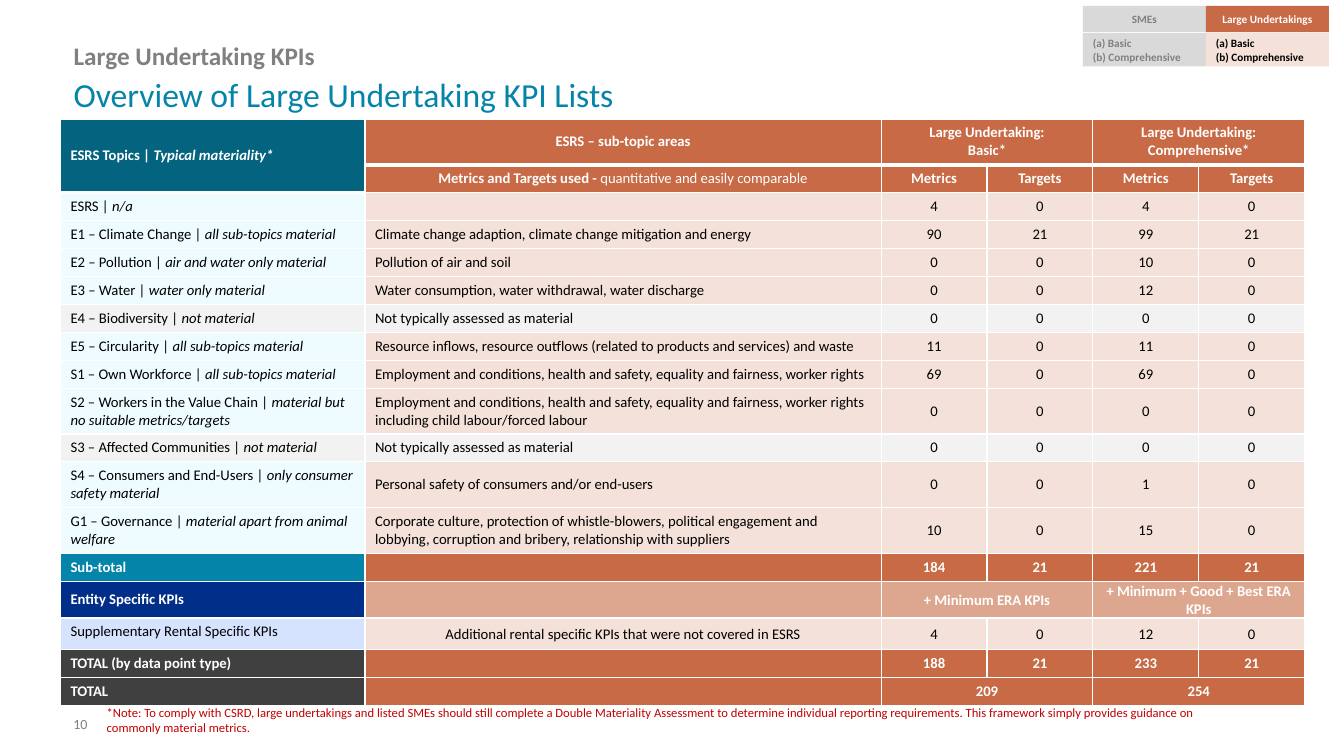
from lxml import etree
from pptx import Presentation
from pptx.dml.color import RGBColor
from pptx.enum.shapes import MSO_SHAPE
from pptx.enum.text import MSO_ANCHOR, MSO_AUTO_SIZE, PP_ALIGN
from pptx.oxml.ns import qn
from pptx.util import Inches, Pt

RECT = MSO_SHAPE.RECTANGLE
TOP, MIDDLE = MSO_ANCHOR.TOP, MSO_ANCHOR.MIDDLE
LEFT, CENTER = PP_ALIGN.LEFT, PP_ALIGN.CENTER
NO_FIT = MSO_AUTO_SIZE.NONE

WHITE = RGBColor(0xFF, 0xFF, 0xFF)
BLACK = RGBColor(0x00, 0x00, 0x00)
GREY = RGBColor(0x80, 0x80, 0x80)
SILVER = RGBColor(0xD9, 0xD9, 0xD9)
PALE_GREY = RGBColor(0xF2, 0xF2, 0xF2)
CHARCOAL = RGBColor(0x40, 0x40, 0x40)
RUST = RGBColor(0xC7, 0x6A, 0x45)
ROSE = RGBColor(0xDD, 0xA6, 0x8F)
PALE_ROSE = RGBColor(0xF4, 0xE1, 0xDA)
DARK_TEAL = RGBColor(0x04, 0x63, 0x7F)
TEAL = RGBColor(0x05, 0x84, 0xAA)
PALE_TEAL = RGBColor(0xEF, 0xFC, 0xFF)
NAVY = RGBColor(0x00, 0x2E, 0x89)
PALE_BLUE = RGBColor(0xD6, 0xE3, 0xFF)
RED = RGBColor(0xC0, 0x00, 0x00)

COLUMNS = [3.02, 5.12] + [1.05] * 4
ROWS = [0.41] + [0.25] * 8 + [0.41, 0.25, 0.41, 0.41, 0.25, 0.33, 0.31, 0.25, 0.25]

TOPICS = [
    ("ESRS", "n/a", "", (4, 0, 4, 0)),
    ("E1 – Climate Change", "all sub-topics material",
     "Climate change adaption, climate change mitigation and energy", (90, 21, 99, 21)),
    ("E2 – Pollution", "air and water only material",
     "Pollution of air and soil", (0, 0, 10, 0)),
    ("E3 – Water", "water only material",
     "Water consumption, water withdrawal, water discharge", (0, 0, 12, 0)),
    ("E4 – Biodiversity", "not material",
     "Not typically assessed as material", (0, 0, 0, 0)),
    ("E5 – Circularity", "all sub-topics material",
     "Resource inflows, resource outflows (related to products and services) and waste",
     (11, 0, 11, 0)),
    ("S1 – Own Workforce", "all sub-topics material",
     "Employment and conditions, health and safety, equality and fairness, worker rights",
     (69, 0, 69, 0)),
    ("S2 – Workers in the Value Chain", "material but no suitable metrics/targets",
     "Employment and conditions, health and safety, equality and fairness, worker rights "
     "including child labour/forced labour", (0, 0, 0, 0)),
    ("S3 – Affected Communities", "not material",
     "Not typically assessed as material", (0, 0, 0, 0)),
    ("S4 – Consumers and End-Users", "only consumer safety material",
     "Personal safety of consumers and/or end-users", (0, 0, 1, 0)),
    ("G1 – Governance", "material apart from animal welfare",
     "Corporate culture, protection of whistle-blowers, political engagement and lobbying, "
     "corruption and bribery, relationship with suppliers", (10, 0, 15, 0)),
]

SUMMARY = [
    ("Sub-total", TEAL, "", RUST, (184, 21, 221, 21)),
    ("Entity Specific KPIs", NAVY, "", ROSE,
     ("+ Minimum ERA KPIs", "", "+ Minimum + Good + Best ERA KPIs", "")),
    ("Supplementary Rental Specific KPIs", PALE_BLUE,
     "Additional rental specific KPIs that were not covered in ESRS", PALE_ROSE,
     (4, 0, 12, 0)),
    ("TOTAL (by data point type)", CHARCOAL, "", RUST, (188, 21, 233, 21)),
    ("TOTAL", CHARCOAL, "", RUST, (209, "", 254, "")),
]


class KpiSlide:
    """Holds the text style and the current slide."""

    font = "Calibri"

    def __init__(self, prs):
        """Add a title and body slide."""
        self.s = prs.slides.add_slide(prs.slide_layouts[1])

    def add_lines(self, tf, lines, size, color, align=LEFT):
        """Add lines of (text, style) runs, where style holds b or i."""
        for i, line in enumerate(lines):
            p = tf.add_paragraph() if i else tf.paragraphs[0]
            p.alignment = align
            for text, style in line:
                r = p.add_run()
                r.text = text
                r.font.name, r.font.size = self.font, Pt(size)
                r.font.color.rgb = color
                r.font.bold, r.font.italic = "b" in style, "i" in style

    def placeholder(self, index, box, anchor, run, size, color):
        """Move and fill one placeholder without a bullet."""
        sp = self.s.placeholders[index]
        sp.left, sp.top, sp.width, sp.height = map(Inches, box)
        tf = sp.text_frame
        tf.auto_size, tf.vertical_anchor = NO_FIT, anchor
        p = tf.paragraphs[0]
        pPr = p._p.get_or_add_pPr()
        pPr.set("marL", "0")
        pPr.set("indent", "0")
        etree.SubElement(pPr, qn("a:buNone"))
        p.line_spacing, p.space_before = 0.9, Pt(0)
        self.add_lines(tf, [[run]], size, color)

    def textbox(self, box, text, size, color, anchor=TOP):
        """Add a wrapping text box."""
        tf = self.s.shapes.add_textbox(*map(Inches, box)).text_frame
        tf.word_wrap, tf.vertical_anchor = True, anchor
        self.add_lines(tf, [[(text, "")]], size, color)

    def tag(self, box, lines, fill, color, align):
        """Add a filled rectangle with small bold text."""
        sp = self.s.shapes.add_shape(RECT, *map(Inches, box))
        sp.shadow.inherit = False
        sp.fill.solid()
        sp.fill.fore_color.rgb = fill
        sp.line.fill.background()
        tf = sp.text_frame
        tf.word_wrap, tf.vertical_anchor = True, MIDDLE
        self.add_lines(tf, [[(line, "b")] for line in lines], 8, color, align)

    def table(self, left, top):
        """Add an empty table with the column and row sizes."""
        tbl = self.s.shapes.add_table(len(ROWS), len(COLUMNS), Inches(left), Inches(top),
                                      Inches(sum(COLUMNS)), Inches(sum(ROWS))).table
        tbl.first_row = tbl.horz_banding = False
        for column, width in zip(tbl.columns, COLUMNS):
            column.width = Inches(width)
        for row, height in zip(tbl.rows, ROWS):
            row.height = Inches(height)
        return tbl

    def cell(self, cell, lines, fill, color, align=CENTER, anchor=MIDDLE,
             tight=False, bottom=1):
        """Fill and border one table cell and add its text."""
        tcPr = cell._tc.get_or_add_tcPr()
        for side, width in zip("LRTB", (1, 1, 1, bottom)):
            ln = etree.SubElement(tcPr, qn(f"a:ln{side}"), w=str(Pt(width)))
            solid = etree.SubElement(ln, qn("a:solidFill"))
            etree.SubElement(solid, qn("a:srgbClr"), val=str(WHITE))
        cell.fill.solid()
        cell.fill.fore_color.rgb = fill
        cell.vertical_anchor = anchor
        if tight:
            cell.margin_left = cell.margin_top = cell.margin_right = Inches(0.01)
            cell.margin_bottom = 0
        if lines:
            self.add_lines(cell.text_frame, lines, 10.5, color, align)
        else:
            p = cell.text_frame.paragraphs[0]
            etree.SubElement(p._p, qn("a:endParaRPr"), sz="1050")


def fill_table(k, tbl):
    """Fill the header, topic and summary rows."""
    metrics, targets = [[("Metrics", "b")]], [[("Targets", "b")]]
    header = [
        [[[("ESRS Topics | ", "b"), ("Typical materiality*", "bi")]],
         [[("ESRS – sub-topic areas", "b")]],
         [[("Large Undertaking:", "b")], [("Basic*", "b")]], [],
         [[("Large Undertaking: Comprehensive*", "b")]], []],
        [[], [[("Metrics and Targets used - ", "b"),
               ("quantitative and easily comparable", "")]],
         metrics, targets, metrics, targets],
    ]
    for i, row in enumerate(header):
        for j, lines in enumerate(row):
            k.cell(tbl.cell(i, j), lines, RUST if j else DARK_TEAL, WHITE,
                   CENTER if j else LEFT, bottom=1 if i else 3)

    for i, (topic, note, areas, counts) in enumerate(TOPICS, len(header)):
        immaterial = note == "not material"
        fill = PALE_GREY if immaterial else PALE_ROSE
        k.cell(tbl.cell(i, 0), [[(f"{topic} | ", ""), (note, "i")]],
               PALE_GREY if immaterial else PALE_TEAL, BLACK, LEFT)
        k.cell(tbl.cell(i, 1), [[(areas, "")]] if areas else [], fill, BLACK, LEFT)
        for j, count in enumerate(counts, 2):
            k.cell(tbl.cell(i, j), [[(str(count), "")]], fill, BLACK)

    for i, (label, label_fill, areas, fill, values) in enumerate(
            SUMMARY, len(header) + len(TOPICS)):
        color, style = (BLACK, "") if label_fill == PALE_BLUE else (WHITE, "b")
        k.cell(tbl.cell(i, 0), [[(label, style)]], label_fill, color, LEFT,
               MIDDLE if label_fill == NAVY else TOP)
        for j, value in enumerate((areas,) + values, 1):
            lines = [] if value == "" else [[(str(value), style)]]
            k.cell(tbl.cell(i, j), lines, fill, color, tight=bool(lines) and label != "Sub-total")

    tbl.cell(0, 0).merge(tbl.cell(1, 0))
    for i in (0, 14, 17):
        for j in (2, 4):
            tbl.cell(i, j).merge(tbl.cell(i, j + 1))


def main():
    """Build and save the slide."""
    prs = Presentation()
    prs.slide_width, prs.slide_height = Inches(13.33), Inches(7.5)
    k = KpiSlide(prs)
    k.placeholder(0, (0.63, 0.4, 12.06, 0.33), MIDDLE,
                  ("Large Undertaking KPIs", "b"), 18, GREY)
    k.placeholder(1, (0.63, 0.73, 12.06, 0.89), TOP,
                  ("Overview of Large Undertaking KPI Lists", ""), 24, TEAL)
    fill_table(k, k.table(0.6, 1.18))
    k.textbox((0.96, 6.94, 11.36, 0.45),
              "*Note: To comply with CSRD, large undertakings and listed SMEs should still "
              "complete a Double Materiality Assessment to determine individual reporting "
              "requirements. This framework simply provides guidance on commonly material "
              "metrics.", 9, RED)
    levels = ["(a) Basic", "(b) Comprehensive"]
    for left, name, fill, color, level_fill, level_color in (
            (10.74, "SMEs", SILVER, GREY, SILVER, GREY),
            (11.96, "Large Undertakings", RUST, WHITE, PALE_ROSE, BLACK)):
        k.tag((left, 0.06, 1.22, 0.26), [name], fill, color, CENTER)
        k.tag((left, 0.33, 1.22, 0.33), levels, level_fill, level_color, LEFT)
    k.textbox((0.63, 6.98, 2.97, 0.4), "10", 10, GREY, MIDDLE)
    prs.save("out.pptx")


if __name__ == "__main__":
    main()
